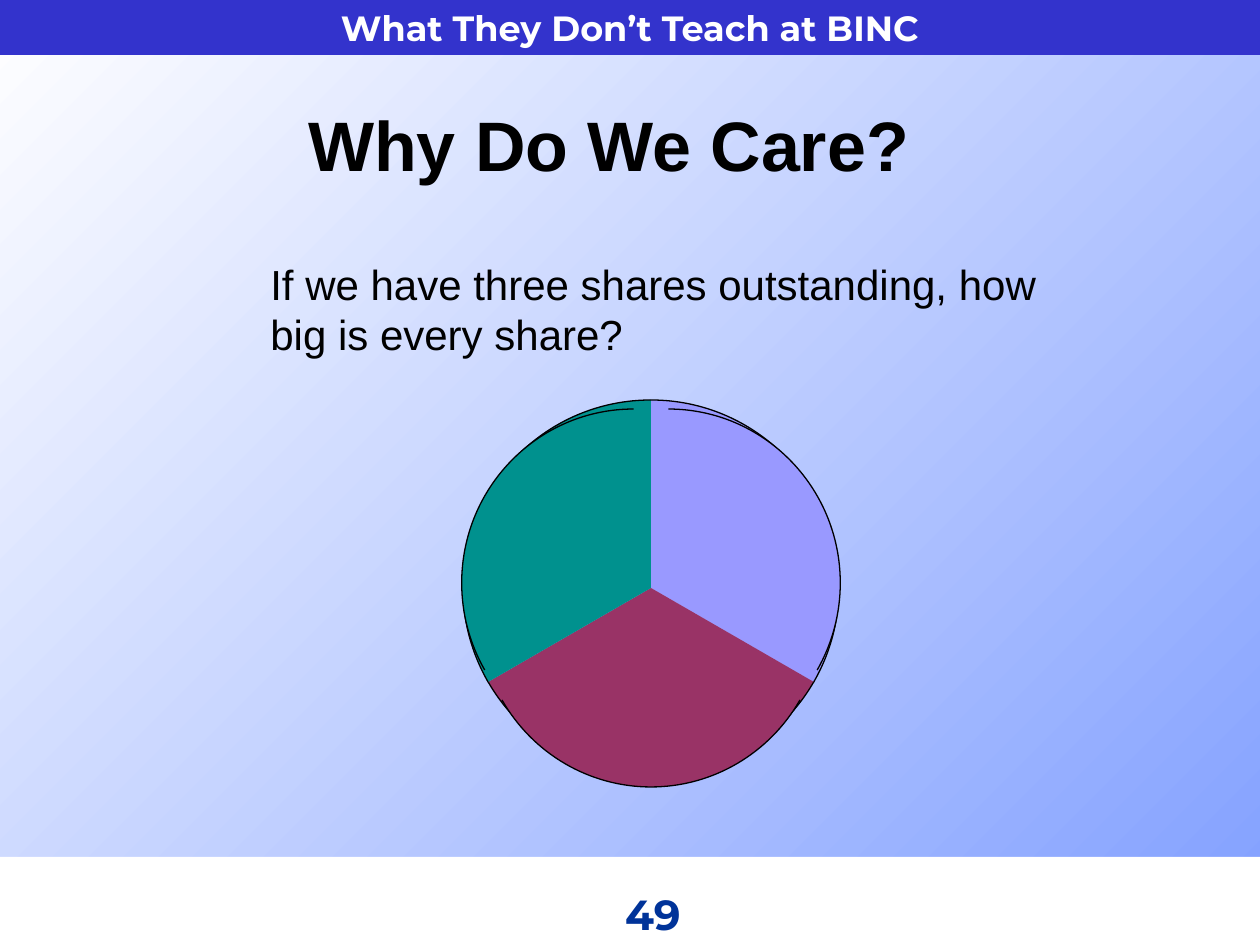
from copy import deepcopy
from dataclasses import dataclass
from math import cos, radians, sin, tan

from pptx import Presentation
from pptx.dml.color import RGBColor
from pptx.enum.shapes import MSO_SHAPE
from pptx.enum.text import MSO_ANCHOR, PP_ALIGN
from pptx.oxml.ns import qn
from pptx.shapes.autoshape import Shape
from pptx.slide import Slide
from pptx.util import Emu, Pt

PIXELS_PER_INCH = 126


@dataclass(frozen=True)
class Theme:
    white: str = "FFFFFF"
    black: str = "000000"
    band: str = "3333CC"
    background_end: str = "819FFF"
    page_number: str = "003399"
    body_font: str = "Arial"
    brand_font: str = "Montserrat"
    header_size: int = 20
    text_size: int = 24
    title_size: int = 40
    outline: float = 0.75


THEME = Theme()
Point = tuple[float, float]


@dataclass(frozen=True)
class Box:
    left: int
    top: int
    width: int
    height: int


@dataclass(frozen=True)
class Label:
    text: str
    box: Box
    font: str
    size: int
    color: str
    bold: bool = True
    align: PP_ALIGN = PP_ALIGN.CENTER
    anchor: MSO_ANCHOR = MSO_ANCHOR.TOP


@dataclass(frozen=True)
class Sector:
    """Angles in degrees, clockwise from twelve o'clock, split at an axis."""
    color: str
    start: int
    axis: int
    end: int


@dataclass(frozen=True)
class Pie:
    center_x: int
    center_y: int
    radius_x: int
    radius_y: int
    explosion: int = 0


HEADER_BOX = Box(0, 0, 1260, 55)
FOOTER_BOX = Box(0, 857, 1260, 88)

HEADER = Label("What They Don’t Teach at BINC", HEADER_BOX, THEME.brand_font,
               THEME.header_size, THEME.white, anchor=MSO_ANCHOR.MIDDLE)
QUESTION = Label("If we have three shares outstanding, how big is every share?",
                 Box(258, 252, 819, 128), THEME.body_font, THEME.text_size,
                 THEME.black, bold=False, align=PP_ALIGN.LEFT)
TITLE = Label("Why Do We Care?", Box(73, 91, 1071, 106), THEME.body_font,
              THEME.title_size, THEME.black, anchor=MSO_ANCHOR.MIDDLE)
PAGE_NUMBER = Label("49", Box(431, 882, 262, 63), THEME.brand_font,
                    THEME.text_size, THEME.page_number, align=PP_ALIGN.RIGHT)

SECTORS = (
    Sector("9999FF", 0, 90, 120),
    Sector("993366", 120, 180, 240),
    Sector("00918E", 240, 270, 360),
)
PIES = (Pie(651, 588, 188, 188), Pie(651, 593, 172, 174, explosion=20))


def px(value: float) -> Emu:
    return Emu(round(value * 914400 / PIXELS_PER_INCH))


def rgb(color: str) -> RGBColor:
    return RGBColor.from_string(color)


def placed(box: Box) -> tuple[Emu, ...]:
    return px(box.left), px(box.top), px(box.width), px(box.height)


def paint_background(slide: Slide) -> None:
    fill = slide.background.fill
    fill.gradient()
    fill.gradient_angle = 315
    colors = (THEME.white, THEME.background_end)
    for position, (stop, color) in enumerate(zip(fill.gradient_stops, colors)):
        stop.position = position
        stop.color.rgb = rgb(color)


def add_band(slide: Slide, box: Box, color: str) -> None:
    band = slide.shapes.add_shape(MSO_SHAPE.RECTANGLE, *placed(box))
    band.shadow.inherit = False
    band.fill.solid()
    band.fill.fore_color.rgb = rgb(color)
    band.line.fill.background()


def add_label(slide: Slide, label: Label) -> None:
    frame = slide.shapes.add_textbox(*placed(label.box)).text_frame
    frame.word_wrap = True
    frame.vertical_anchor = label.anchor
    paragraph = frame.paragraphs[0]
    paragraph.text = label.text
    paragraph.alignment = label.align
    paragraph.font.name = label.font
    paragraph.font.size = Pt(label.size)
    paragraph.font.bold = label.bold
    paragraph.font.color.rgb = rgb(label.color)


def direction(angle: float) -> Point:
    return sin(radians(angle)), -cos(radians(angle))


def curve_points(start: int, end: int) -> list[Point]:
    """Two Bézier controls and the end point of an arc on the unit circle."""
    handle = 4 / 3 * tan(radians(end - start) / 4)
    (start_x, start_y), (end_x, end_y) = direction(start), direction(end)
    return [(start_x - handle * start_y, start_y + handle * start_x),
            (end_x + handle * end_y, end_y - handle * end_x),
            (end_x, end_y)]


def bend_and_outline_arc(shape: Shape) -> None:
    """Turn segment triples into curves and stroke only the arc."""
    path = shape._element.find(".//" + qn("a:path"))
    segments = path.findall(qn("a:lnTo"))[:-1]
    for first in range(0, len(segments), 3):
        curve = path.makeelement(qn("a:cubicBezTo"), {})
        segments[first].addprevious(curve)
        for segment in segments[first:first + 3]:
            curve.append(segment[0])
            path.remove(segment)
    arc = deepcopy(path)
    for radius_or_close in arc[-2:]:
        arc.remove(radius_or_close)
    arc.set("fill", "none")
    path.set("stroke", "0")
    path.addprevious(arc)


def add_pie(slide: Slide, pie: Pie) -> None:
    group = slide.shapes.add_group_shape()
    for sector in SECTORS:
        offset_x, offset_y = direction((sector.start + sector.end) / 2)
        apex_x = pie.center_x + pie.explosion * offset_x
        apex_y = pie.center_y + pie.explosion * offset_y
        unit_points = [direction(sector.start),
                       *curve_points(sector.start, sector.axis),
                       *curve_points(sector.axis, sector.end), (0, 0)]
        first, *rest = [(px(apex_x + pie.radius_x * x), px(apex_y + pie.radius_y * y))
                        for x, y in unit_points]
        builder = group.shapes.build_freeform(*first)
        builder.add_line_segments(rest, close=True)
        shape = builder.convert_to_shape()
        shape.shadow.inherit = False
        shape.fill.solid()
        shape.fill.fore_color.rgb = rgb(sector.color)
        shape.line.color.rgb = rgb(THEME.black)
        shape.line.width = Pt(THEME.outline)
        bend_and_outline_arc(shape)


def main() -> None:
    presentation = Presentation()
    presentation.slide_width, presentation.slide_height = px(1260), px(945)
    slide = presentation.slides.add_slide(presentation.slide_layouts[6])
    paint_background(slide)
    add_band(slide, FOOTER_BOX, THEME.white)
    add_band(slide, HEADER_BOX, THEME.band)
    add_label(slide, HEADER)
    add_label(slide, QUESTION)
    for pie in PIES:
        add_pie(slide, pie)
    add_label(slide, TITLE)
    add_label(slide, PAGE_NUMBER)
    presentation.save("out.pptx")


if __name__ == "__main__":
    main()
